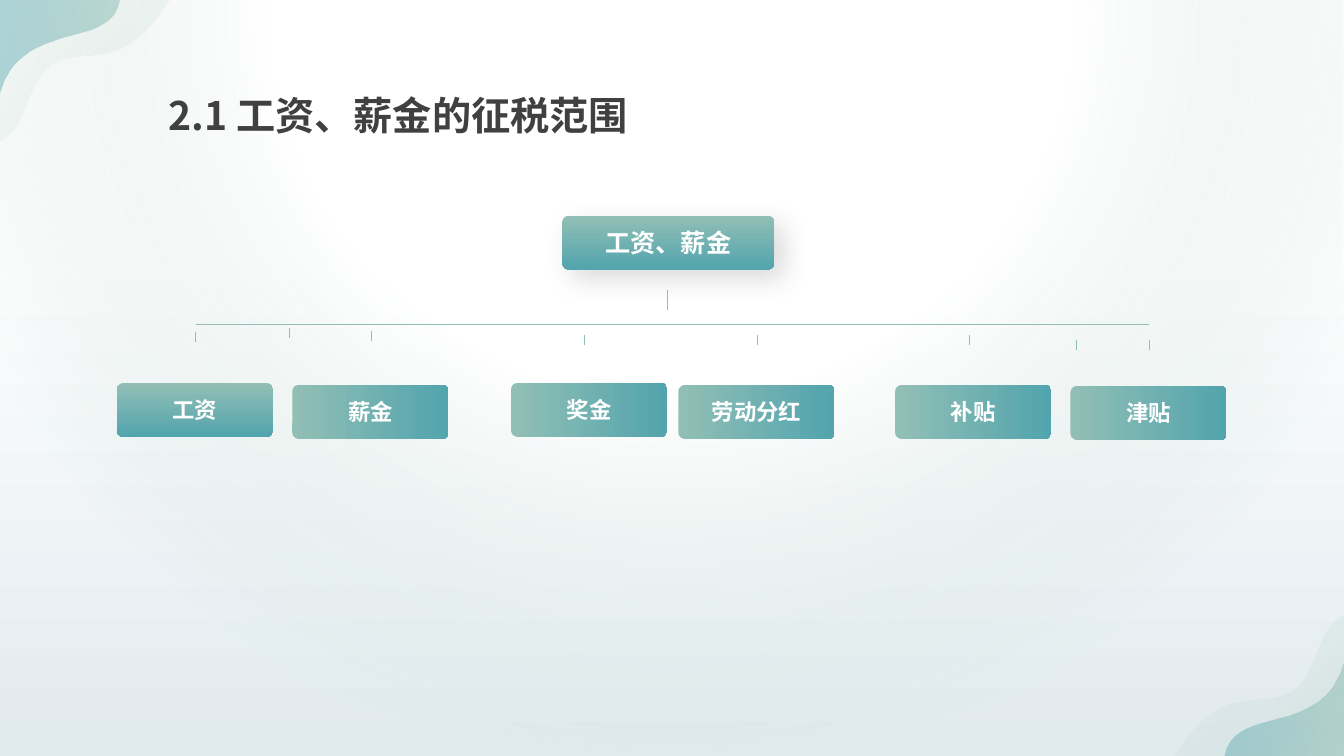
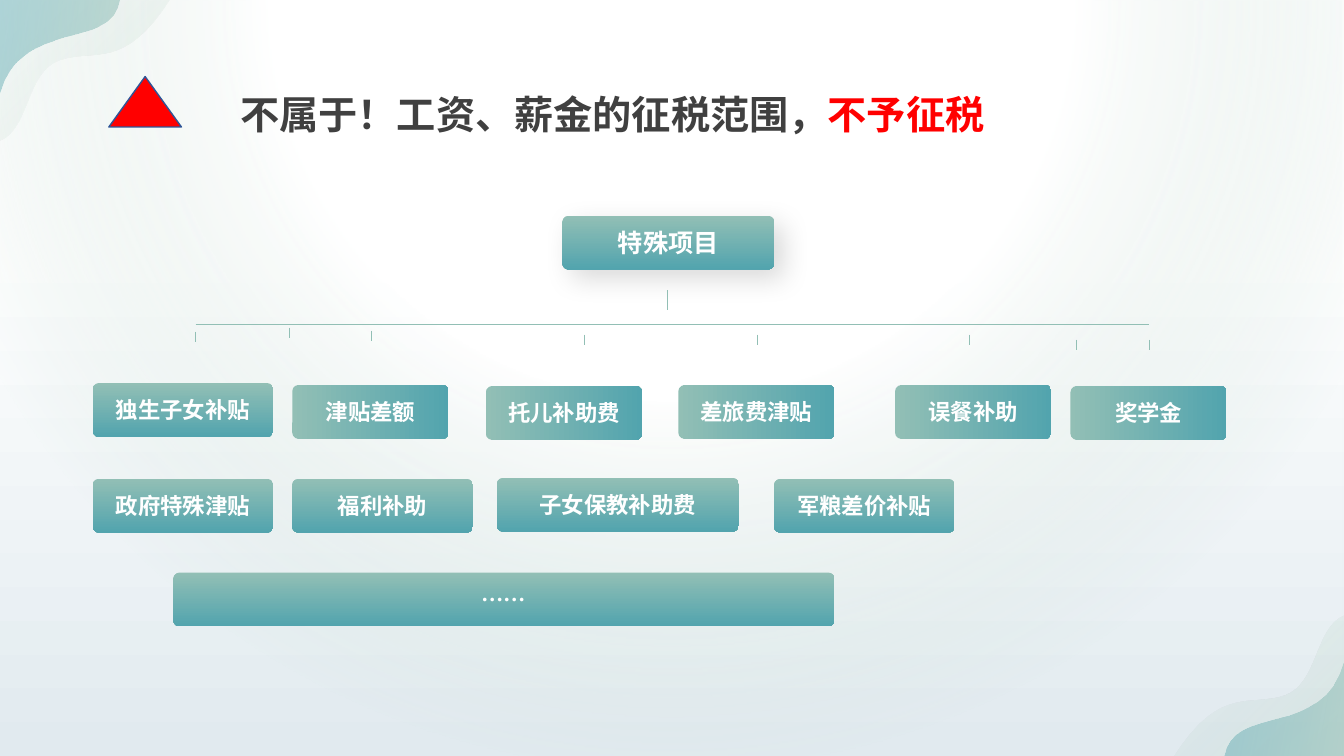
"""Builds two tax-scope slides on a grid of 80 columns by 45 rows."""
from lxml import etree
from pptx import Presentation
from pptx import util as u
from pptx.dml.color import RGBColor
from pptx.enum import shapes, text
from pptx.oxml.ns import qn

COLUMNS, ROWS = 80, 45
WHITE = RGBColor(0xFF, 0xFF, 0xFF)
MIST = RGBColor(0xE1, 0xEA, 0xEF)
HALO = RGBColor(0xD2, 0xE3, 0xDC)
SAGE = RGBColor(0x92, 0xBF, 0xB5)
LEAF = RGBColor(0xB6, 0xD3, 0xB7)
TEAL = RGBColor(0x52, 0xA4, 0xAE)
INK = RGBColor(0x40, 0x40, 0x40)
BLACK = RGBColor(0x00, 0x00, 0x00)
RED = RGBColor(0xFF, 0x00, 0x00)
NAVY = RGBColor(0x2F, 0x55, 0x97)

TITLE_FONT = "Noto Sans CJK JP"
LABEL_FONT = "Noto Sans CJK SC"
DOWN, ACROSS = 90, 0
BOX_HEIGHT = 3.2
NARROW, WIDE = 9.3, 10.75

WAVE = [(10.08, 0), (7.38, 4.26), (5.58, 2.88), (3.54, 3.6),
        (1.56, 4.32), (1.8, 7.68), (0, 8.34)]
CORNER = [(7.14, 0), (6.72, 3.12), (1.2, 1.02), (0, 5.64)]
WAVE_STOPS = [(0, SAGE, 0), (92, LEAF, 22)]
CORNER_STOPS = [(0, SAGE, 52), (100, TEAL, 43)]

RAIL_LEFT, RAIL_RIGHT, RAIL_TOP = 11.64, 68.4, 19.32
TICKS = [(RAIL_LEFT, 19.74), (17.2, 19.5), (22.08, 19.68), (34.8, 19.92),
         (45.06, 19.92), (57.72, 19.92), (64.08, 20.22), (RAIL_RIGHT, 20.22)]


def add_color(parent, color, opacity):
    """Add a colour with an opacity in percent."""
    tint = etree.SubElement(parent, qn("a:srgbClr"), {"val": str(color)})
    if opacity < 100:
        etree.SubElement(tint, qn("a:alpha"), {"val": str(opacity * 1000)})


def curve_points(knots, steps=16):
    """Return points along a chain of cubic curves."""
    points = [knots[0]]
    for first in range(0, len(knots) - 1, 3):
        a, b, c, d = knots[first:first + 4]
        for step in range(1, steps + 1):
            t = step / steps
            s = 1 - t
            points.append(tuple(
                s ** 3 * a[i] + 3 * s * s * t * b[i]
                + 3 * s * t * t * c[i] + t ** 3 * d[i] for i in (0, 1)))
    return points


class Deck:
    """Holds the shared style and the current slide."""

    def __init__(self):
        """Set up a wide presentation and its grid."""
        self.show = Presentation()
        self.show.slide_width = u.Inches(13.33)
        self.show.slide_height = u.Inches(7.5)
        self.column = self.show.slide_width / COLUMNS
        self.row = self.show.slide_height / ROWS
        self.slide = None

    def spot(self, column, row):
        """Turn columns and rows into lengths."""
        return u.Emu(round(column * self.column)), u.Emu(round(row * self.row))

    def new_slide(self):
        """Start a slide with the shared backdrop."""
        self.slide = self.show.slides.add_slide(self.show.slide_layouts[6])
        full = (0, 0, COLUMNS, ROWS)
        sky = self.shape(shapes.MSO_SHAPE.RECTANGLE, *full)
        self.gradient(sky, [(0, WHITE, 100), (33, WHITE, 100), (100, MIST, 100)], DOWN)
        glow = self.shape(shapes.MSO_SHAPE.RECTANGLE, *full)
        self.gradient(glow, [(0, WHITE, 100), (52, WHITE, 100), (100, HALO, 0)],
                      center=(50, -80, 50, 180))
        for turned in (False, True):
            self.ripple(WAVE, WAVE_STOPS, 45, turned)
            self.ripple(CORNER, CORNER_STOPS, 190, turned)

    def shape(self, kind, left, top, width, height):
        """Add a preset shape without line or shadow."""
        item = self.slide.shapes.add_shape(
            kind, *self.spot(left, top), *self.spot(width, height))
        item.shadow.inherit = False
        item.line.fill.background()
        return item

    def gradient(self, item, stops, angle=DOWN, center=None):
        """Fill a shape with a linear or a circular gradient."""
        item.fill.gradient()
        fill = item._element.spPr.find(qn("a:gradFill"))
        fill.clear()
        fill.set("rotWithShape", "1")
        stop_list = etree.SubElement(fill, qn("a:gsLst"))
        for place, color, opacity in stops:
            stop = etree.SubElement(stop_list, qn("a:gs"), {"pos": str(place * 1000)})
            add_color(stop, color, opacity)
        if center:
            circle = etree.SubElement(fill, qn("a:path"), {"path": "circle"})
            etree.SubElement(circle, qn("a:fillToRect"), {
                side: str(share * 1000) for side, share in zip("ltrb", center)})
        else:
            etree.SubElement(fill, qn("a:lin"), {"ang": str(angle * 60000), "scaled": "0"})

    def ripple(self, knots, stops, angle, turned):
        """Add a curved corner, turned to the far corner if asked."""
        outline = [(0, 0)] + curve_points(knots)
        if turned:
            outline = [(COLUMNS - x, ROWS - y) for x, y in outline]
        corner, *rest = [self.spot(x, y) for x, y in outline]
        builder = self.slide.shapes.build_freeform(*corner)
        builder.add_line_segments(rest, close=True)
        item = builder.convert_to_shape()
        item.shadow.inherit = False
        item.line.fill.background()
        self.gradient(item, stops, angle)

    def run(self, paragraph, words, size, font, color):
        """Add one bold run."""
        run = paragraph.add_run()
        run.text = words
        run.font.size = u.Pt(size)
        run.font.bold = True
        run.font.color.rgb = color
        run.font.name = font
        etree.SubElement(run._r.get_or_add_rPr(), qn("a:ea"), {"typeface": font})

    def title(self, left, top, width, *parts):
        """Add a title from pairs of words and colour."""
        frame = self.slide.shapes.add_textbox(
            *self.spot(left, top), *self.spot(width, 3.96)).text_frame
        frame.word_wrap = True
        frame.auto_size = text.MSO_AUTO_SIZE.SHAPE_TO_FIT_TEXT
        heading = frame.paragraphs[0]
        heading.alignment = text.PP_ALIGN.CENTER
        heading.line_spacing = 1.2
        for words, color in parts:
            self.run(heading, words, 28, TITLE_FONT, color)

    def box(self, label, left, top, width, angle=DOWN, size=16):
        """Add a rounded box with a centred label."""
        item = self.shape(shapes.MSO_SHAPE.ROUNDED_RECTANGLE, left, top, width, BOX_HEIGHT)
        item.adjustments[0] = 0.115
        self.gradient(item, [(0, SAGE, 100), (100, TEAL, 100)], angle)
        frame = item.text_frame
        frame.word_wrap = True
        frame.vertical_anchor = text.MSO_ANCHOR.MIDDLE
        frame.paragraphs[0].alignment = text.PP_ALIGN.CENTER
        self.run(frame.paragraphs[0], label, size, LABEL_FONT, WHITE)
        return item

    def root(self, label):
        """Add the top box with its soft shadow."""
        item = self.box(label, 33.48, 12.84, 12.6, size=18)
        frame = item.text_frame
        frame.margin_left = frame.margin_right = u.Inches(0.07)
        frame.margin_top = frame.margin_bottom = u.Inches(0.04)
        effects = item._element.spPr.find(qn("a:effectLst"))
        shadow = etree.SubElement(effects, qn("a:outerShdw"), {
            "blurRad": str(u.Pt(20)), "dist": str(u.Pt(9)),
            "dir": str(45 * 60000), "algn": "tl", "rotWithShape": "0"})
        add_color(shadow, BLACK, 15)

    def line(self, left, top, right, bottom):
        """Add a thin straight line."""
        item = self.slide.shapes.add_connector(
            shapes.MSO_CONNECTOR.STRAIGHT, *self.spot(left, top), *self.spot(right, bottom))
        item.line.color.rgb = SAGE
        item.line.width = u.Pt(0.5)
        etree.SubElement(item._element.spPr, qn("a:effectLst"))

    def tree(self, root_label, branches):
        """Add a root, its rail with ticks, and the branch boxes."""
        self.root(root_label)
        self.line(39.72, 17.28, 39.72, 18.48)
        self.line(RAIL_LEFT, RAIL_TOP, RAIL_RIGHT, RAIL_TOP)
        for left, top in TICKS:
            self.line(left, top, left, top + 0.6)
        for branch in branches:
            self.box(*branch)

    def warning(self, left, top, width, height):
        """Add the red warning triangle."""
        item = self.shape(shapes.MSO_SHAPE.FLOWCHART_EXTRACT, left, top, width, height)
        item.fill.solid()
        item.fill.fore_color.rgb = RED
        item.line.color.rgb = NAVY
        item.line.width = u.Pt(1)


def main():
    """Build both slides and save them."""
    deck = Deck()

    deck.new_slide()
    deck.title(7.74, 4.56, 31.92, ("2.1 工资、薪金的征税范围", INK))
    deck.tree("工资、薪金", [
        ("工资", 6.96, 22.8, NARROW),
        ("薪金", 17.4, 22.92, NARROW, ACROSS),
        ("奖金", 30.42, 22.8, NARROW, ACROSS),
        ("劳动分红", 40.38, 22.92, NARROW, ACROSS),
        ("补贴", 53.28, 22.92, NARROW, ACROSS),
        ("津贴", 63.72, 22.98, NARROW, ACROSS),
    ])

    deck.new_slide()
    deck.title(11.64, 4.5, 49.62,
               ("不属于！工资、薪金的征税范围，", INK), ("不予征税", RED))
    deck.tree("特殊项目", [
        ("独生子女补贴", 5.52, 22.8, WIDE),
        ("津贴差额", 17.4, 22.92, NARROW, ACROSS),
        ("托儿补助费", 28.92, 22.98, NARROW, ACROSS),
        ("差旅费津贴", 40.38, 22.92, NARROW, ACROSS),
        ("误餐补助", 53.28, 22.92, NARROW, ACROSS),
        ("奖学金", 63.72, 22.98, NARROW, ACROSS),
        ("政府特殊津贴", 5.52, 28.5, WIDE),
        ("福利补助", 17.4, 28.5, WIDE),
        ("子女保教补助费", 29.58, 28.44, 14.4),
        ("军粮差价补贴", 46.08, 28.5, WIDE),
        ("……", 10.32, 34.08, 39.36),
    ])
    deck.warning(6.48, 4.56, 4.32, 3)

    deck.show.save("out.pptx")


if __name__ == "__main__":
    main()
